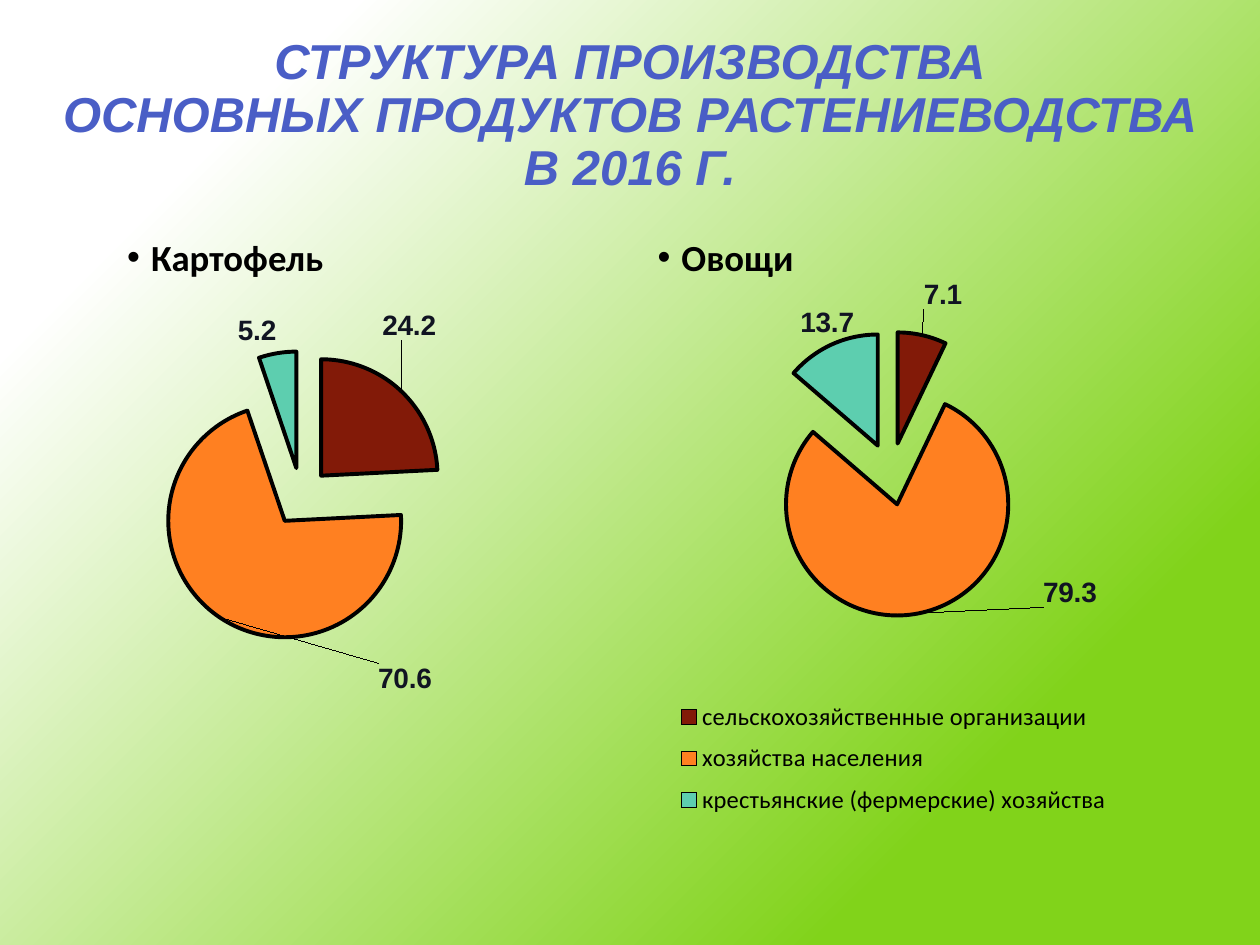
from dataclasses import dataclass
from typing import Optional

from lxml.etree import SubElement
from pptx import Presentation
from pptx.chart.data import CategoryChartData
from pptx.dml.color import RGBColor
from pptx.enum.chart import XL_CHART_TYPE, XL_LABEL_POSITION, XL_LEGEND_POSITION
from pptx.enum.text import MSO_ANCHOR, PP_ALIGN
from pptx.oxml import parse_xml
from pptx.oxml.ns import nsdecls, qn
from pptx.util import Inches, Pt


@dataclass(frozen=True)
class Theme:
    title: str = "4A5EC6"
    text: str = "000000"
    label: str = "111422"
    slices: tuple = ("821A08", "FF8021", "5DCEAF")
    background: tuple = ((0.16, "FFFFFF"), (0.8, "81D31A"))
    heading_font: str = "Arial"
    body_font: str = "Calibri"
    title_size: int = 28
    body_size: int = 21
    label_size: int = 16
    legend_size: int = 14
    outline: float = 2.25


@dataclass(frozen=True)
class Crop:
    name: str
    text_left: float
    box: tuple
    categories: tuple
    values: tuple
    explosion: int
    plot: tuple
    label_shifts: dict
    legend: Optional[tuple] = None


THEME = Theme()
PRODUCERS = ("сельскохозяйственные организации", "хозяйства населения",
             "крестьянские (фермерские) хозяйства")
CROPS = (
    Crop("Картофель", 0.91, (0, 1.52, 4.78, 4.53), ("1", "2", "3"),
         (24.2, 70.6, 5.2), 25, (0, 0.28, 1, 0.51),
         {0: (-0.04, -0.08), 1: (0.36, 0.07)}),
    Crop("Овощи", 5.12, (4.53, 1.7, 5.08, 4.91), PRODUCERS,
         (7.1, 79.3, 13.7), 28, (0, 0.19, 1, 0.46),
         {0: (0, -0.03), 1: (0.19, -0.07), 2: (0.04, 0)},
         (0.16, 0.77, 0.69, 0.22)),
)


def style_font(font, size: float, color: str, name: str, **flags) -> None:
    for key, value in dict(size=Pt(size), name=name, **flags).items():
        setattr(font, key, value)
    font.color.rgb = RGBColor.from_string(color)


def make_layout(place: tuple, target: str = "", edge: bool = True):
    layout = parse_xml(f"<c:layout {nsdecls('c')}><c:manualLayout/></c:layout>")
    settings = [("layoutTarget", target)] if target else []
    if edge:
        settings += [("xMode", "edge"), ("yMode", "edge")]
    settings += zip("xywh", place)
    for tag, value in settings:
        SubElement(layout[0], qn(f"c:{tag}")).set("val", str(value))
    return layout


def set_background(s) -> None:
    fill = s.background.fill
    fill.gradient()
    fill.gradient_angle = 315
    for stop, (position, color) in zip(fill.gradient_stops, THEME.background):
        stop.position = position
        stop.color.rgb = RGBColor.from_string(color)


def add_text(s, text: str, box: tuple, **frame):
    tf = s.shapes.add_textbox(*map(Inches, box)).text_frame
    for key, value in dict(word_wrap=True, **frame).items():
        setattr(tf, key, value)
    p = tf.paragraphs[0]
    p.text = text
    p.line_spacing = 0.9
    return p


def add_title(s) -> None:
    p = add_text(s, "СТРУКТУРА ПРОИЗВОДСТВА\vОСНОВНЫХ ПРОДУКТОВ РАСТЕНИЕВОДСТВА\vВ 2016 Г.",
                 (0.12, 0.4, 9.76, 1.45),
                 vertical_anchor=MSO_ANCHOR.MIDDLE, margin_bottom=Inches(0.45))
    p.alignment = PP_ALIGN.CENTER
    for r in p.runs:
        style_font(r.font, THEME.title_size, THEME.title, THEME.heading_font,
                   bold=True, italic=True)


def add_heading(s, crop: Crop) -> None:
    p = add_text(s, crop.name, (crop.text_left, 1.85, 4.25, 0.45))
    pPr = p._p.get_or_add_pPr()
    pPr.set("marL", str(Inches(0.19)))
    pPr.set("indent", str(-Inches(0.19)))
    SubElement(pPr, qn("a:buFont")).set("typeface", THEME.heading_font)
    SubElement(pPr, qn("a:buChar")).set("char", "•")
    style_font(p.runs[0].font, THEME.body_size, THEME.text, THEME.body_font, bold=True)


def style_label(label) -> None:
    style_font(label.font, THEME.label_size, THEME.label, THEME.heading_font, bold=True)
    label.position = XL_LABEL_POSITION.OUTSIDE_END


def style_slices(series, crop: Crop) -> None:
    explosion = parse_xml(f'<c:explosion {nsdecls("c")} val="{crop.explosion}"/>')
    series._element.find(qn("c:tx")).addnext(explosion)
    for i, color in enumerate(THEME.slices):
        fmt = series.points[i].format
        fmt.fill.solid()
        fmt.fill.fore_color.rgb = RGBColor.from_string(color)
        fmt.line.color.rgb = RGBColor.from_string(THEME.text)
        fmt.line.width = Pt(THEME.outline)
    labels = series.data_labels
    labels.show_value = True
    style_label(labels)
    for i, shift in crop.label_shifts.items():
        style_label(series.points[i].data_label)
        dLbl = labels._element.findall(qn("c:dLbl"))[i]
        dLbl.find(qn("c:idx")).addnext(make_layout(shift, edge=False))


def add_pie(s, crop: Crop) -> None:
    data = CategoryChartData()
    data.categories = crop.categories
    data.add_series("Series 1", crop.values)
    chart = s.shapes.add_chart(XL_CHART_TYPE.PIE, *map(Inches, crop.box), data).chart
    chart.has_title = False
    style_font(chart.font, 10, THEME.text, THEME.body_font)
    plot = chart.plots[0]
    plot.vary_by_categories = True
    area = plot._element.getparent()
    for old in area.findall(qn("c:layout")):
        area.remove(old)
    area.insert(0, make_layout(crop.plot, "inner"))
    style_slices(plot.series[0], crop)
    chart.has_legend = crop.legend is not None
    if crop.legend:
        legend = chart.legend
        legend.position = XL_LEGEND_POSITION.BOTTOM
        legend.include_in_layout = False
        style_font(legend.font, THEME.legend_size, THEME.text, THEME.body_font)
        element = legend._element
        for old in element.findall(qn("c:layout")):
            element.remove(old)
        element.find(qn("c:legendPos")).addnext(make_layout(crop.legend))


def main() -> None:
    prs = Presentation()
    prs.slide_width, prs.slide_height = Inches(10), Inches(7.5)
    s = prs.slides.add_slide(prs.slide_layouts[6])
    set_background(s)
    add_title(s)
    for crop in CROPS:
        add_heading(s, crop)
        add_pie(s, crop)
    prs.save("out.pptx")


if __name__ == "__main__":
    main()
